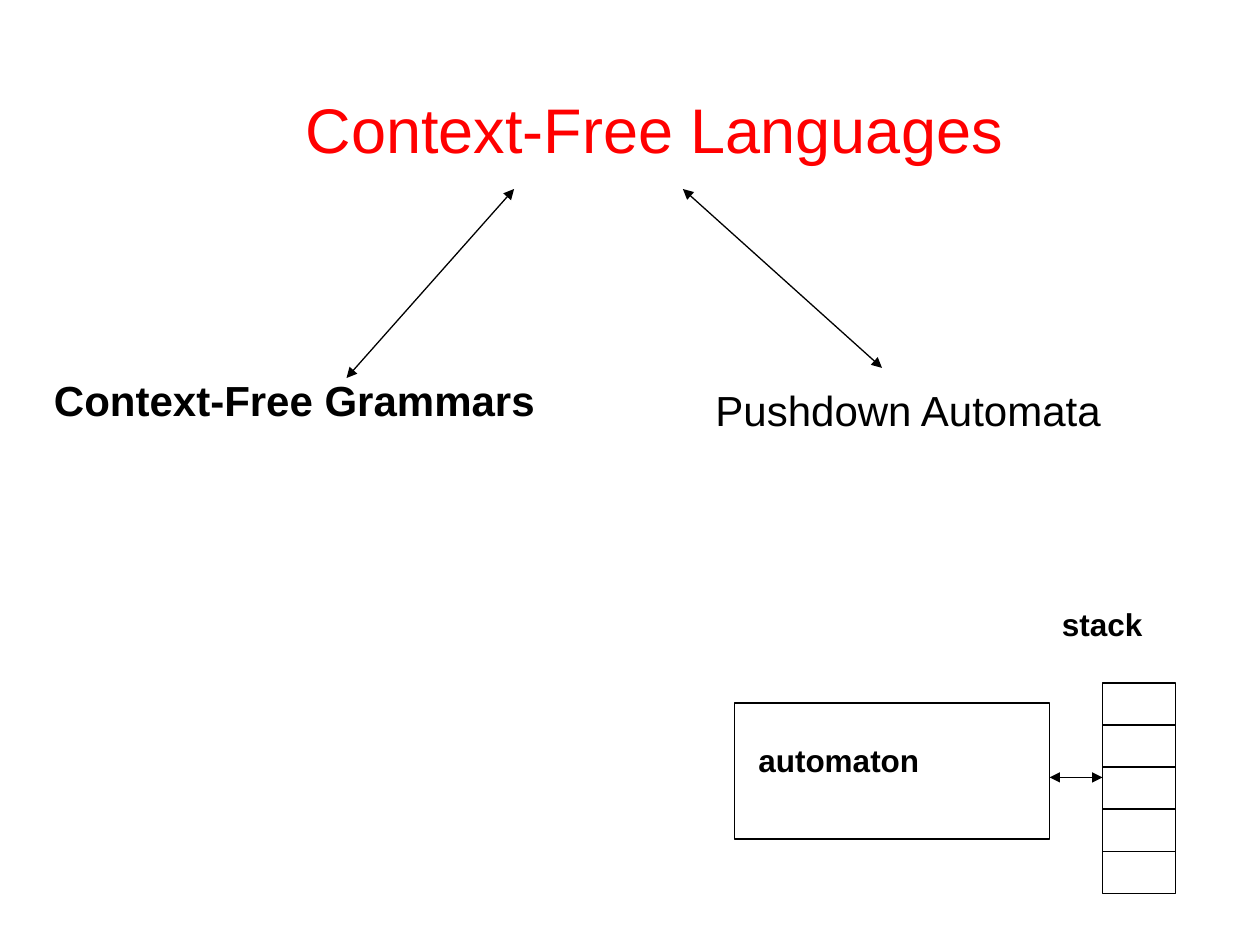
from lxml import etree
from pptx import Presentation
from pptx.dml.color import RGBColor
from pptx.enum.shapes import MSO_CONNECTOR, MSO_SHAPE
from pptx.enum.text import MSO_AUTO_SIZE
from pptx.oxml.ns import qn
from pptx.util import Inches, Pt

RECT = MSO_SHAPE.RECTANGLE
STRAIGHT = MSO_CONNECTOR.STRAIGHT
GROW = MSO_AUTO_SIZE.SHAPE_TO_FIT_TEXT

COLORS = {"title": "FF0000", "ink": "000000"}
FONT = "Arial"
LABELS = [
    ("Context-Free Languages", (2.33, 0.67, 5.78, 0.71), 36, "title", False, False),
    ("Pushdown Automata", (5.58, 3, 3.75, 0.51), 24, "ink", False, True),
    ("Context-Free Grammars", (0.33, 2.92, 4.58, 0.51), 24, "ink", True, True),
    ("stack", (8.33, 4.75, 0.85, 0.4), 18, "ink", True, False),
    ("automaton", (5.92, 5.83, 1.49, 0.4), 18, "ink", True, False),
]
MACHINE = (5.83, 5.58, 2.5, 1.08)
STACK = (8.75, 5.42, 0.58, 1.67)
CELLS = 5
ARROWS = [
    (4.08, 1.5, 2.75, 3),
    (5.42, 1.5, 7, 2.92),
    (MACHINE[0] + MACHINE[2], 6.17, STACK[0], 6.17),
]


def color(name):
    return RGBColor.from_string(COLORS[name])


def pen(shape):
    shape.line.color.rgb = color("ink")
    shape.line.width = Pt(0.75)


def add_box(slide, place):
    box = slide.shapes.add_shape(RECT, *map(Inches, place))
    box.shadow.inherit = False
    box.fill.background()
    pen(box)


def add_line(slide, ends, arrow=False):
    line = slide.shapes.add_connector(STRAIGHT, *map(Inches, ends))
    pen(line)
    if arrow:
        for tag in ("a:headEnd", "a:tailEnd"):
            etree.SubElement(line.line._ln, qn(tag), type="triangle")
    etree.SubElement(line._element.spPr, qn("a:effectLst"))


def add_label(slide, text, place, size, tint, bold, wrap):
    frame = slide.shapes.add_textbox(*map(Inches, place)).text_frame
    frame.text = text
    frame.word_wrap = wrap
    frame.auto_size = GROW
    font = frame.paragraphs[0].runs[0].font
    font.name = FONT
    font.size = Pt(size)
    font.bold = bold
    font.color.rgb = color(tint)


def main():
    deck = Presentation()
    deck.slide_width = Inches(10)
    deck.slide_height = Inches(7.5)
    slide = deck.slides.add_slide(deck.slide_layouts[6])
    for place in (MACHINE, STACK):
        add_box(slide, place)
    left, top, width, height = STACK
    for row in range(1, CELLS):
        y = top + row * height / CELLS
        add_line(slide, (left, y, left + width, y))
    for ends in ARROWS:
        add_line(slide, ends, arrow=True)
    for label in LABELS:
        add_label(slide, *label)
    deck.save("out.pptx")


if __name__ == "__main__":
    main()
